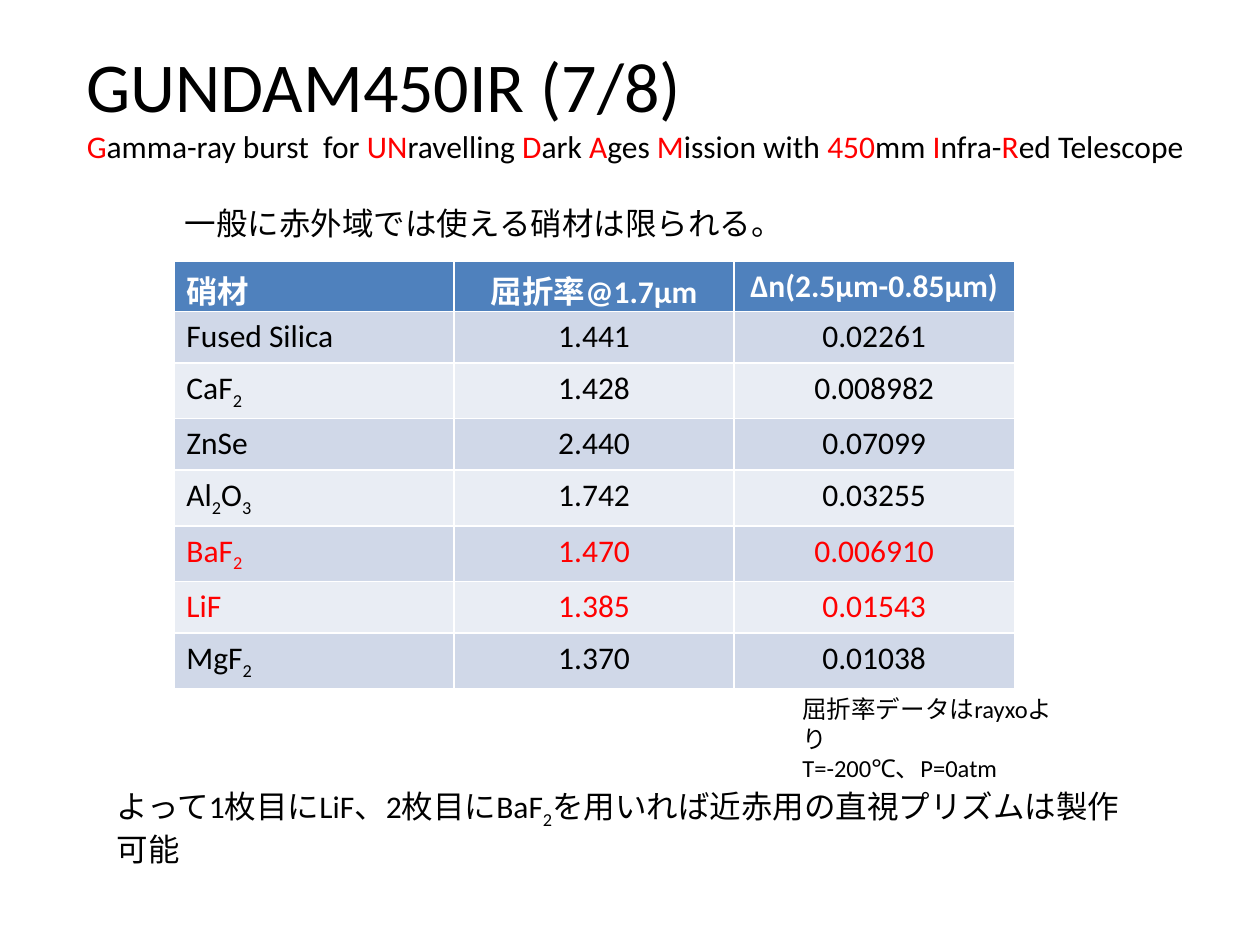
from pptx import Presentation
from pptx.dml.color import RGBColor
from pptx.enum.text import PP_ALIGN
from pptx.util import Pt

PX = 9144
FONT = "Calibri"
CENTER = PP_ALIGN.CENTER
LEFT = PP_ALIGN.LEFT
BLACK = RGBColor(0, 0, 0)
WHITE = RGBColor(255, 255, 255)
RED = RGBColor(255, 0, 0)
BLUE = RGBColor(0x4F, 0x81, 0xBD)
BANDS = [RGBColor(0xE9, 0xED, 0xF4), RGBColor(0xD0, 0xD8, 0xE8)]


def write(para, text, size=18, color=BLACK, accent=None):
    para.font.name = FONT
    para.font.size = Pt(size)
    if not accent:
        para.font.color.rgb = color
    for i, part in enumerate(text.split("|")):
        if not part:
            continue
        run = para.add_run()
        run.text = part
        if accent:
            run.font.color.rgb = accent if i % 2 else color
        elif i % 2:
            run.font._element.set("baseline", "-25000")


def add_text(left, top, width, height):
    box = slide.shapes.add_textbox(left * PX, top * PX, width * PX, height * PX)
    box.text_frame.word_wrap = True
    return box.text_frame


deck = Presentation()
deck.slide_width = 1000 * PX
deck.slide_height = 750 * PX
slide = deck.slides.add_slide(deck.slide_layouts[6])

title = add_text(59, 29, 941, 108)
write(title.paragraphs[0], "GUNDAM450IR (7/8)", 40)
write(
    title.add_paragraph(),
    "|G|amma-ray burst  for |UN|ravelling |D|ark |A|ges |M|ission with "
    "|450|mm |I|nfra-|R|ed Telescope",
    accent=RED,
)

rows = [
    ("硝材", "屈折率@1.7μm", "Δn(2.5μm-0.85μm)"),
    ("Fused Silica", "1.441", "0.02261"),
    ("CaF|2|", "1.428", "0.008982"),
    ("ZnSe", "2.440", "0.07099"),
    ("Al|2|O|3|", "1.742", "0.03255"),
    ("BaF|2|", "1.470", "0.006910"),
    ("LiF", "1.385", "0.01543"),
    ("MgF|2|", "1.370", "0.01038"),
]
chosen = ("BaF|2|", "LiF")
frame = slide.shapes.add_table(len(rows), 3, 138 * PX, 207 * PX, 667 * PX, 324 * PX)
table = frame.table
for r, row in enumerate(rows):
    table.rows[r].height = (41 if r else 15) * PX
    color = RED if row[0] in chosen else BLACK if r else WHITE
    for c, text in enumerate(row):
        cell = table.cell(r, c)
        cell.fill.solid()
        cell.fill.fore_color.rgb = BANDS[r % 2] if r else BLUE
        para = cell.text_frame.paragraphs[0]
        para.alignment = CENTER if c else LEFT
        para.font.bold = r == 0
        write(para, text, color=color)
frame.height = 324 * PX

intro = add_text(137, 157, 473, 40)
write(intro.paragraphs[0], "一般に赤外域では使える硝材は限られる。")

note = add_text(627, 546, 234, 57)
write(note.paragraphs[0], "屈折率データはrayxoより", 14)
write(note.add_paragraph(), "T=-200℃、P=0atm", 14)

result = add_text(83, 620, 839, 40)
write(
    result.paragraphs[0],
    "よって1枚目にLiF、2枚目にBaF|2|を用いれば近赤用の直視プリズムは製作可能",
)

deck.save("out.pptx")
